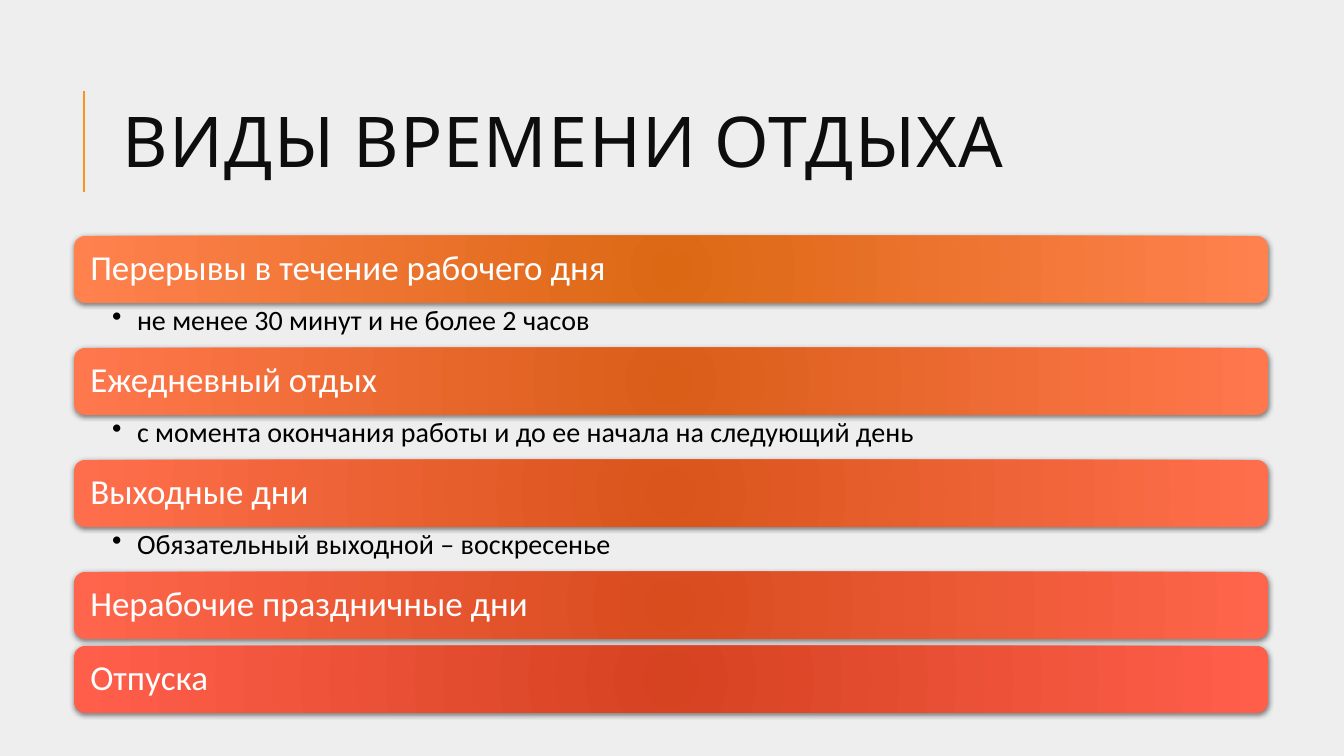
from lxml import etree
from pptx import Presentation
from pptx.dml.color import RGBColor
from pptx.enum.shapes import MSO_CONNECTOR, MSO_SHAPE
from pptx.enum.text import MSO_ANCHOR, PP_ALIGN
from pptx.oxml import parse_xml
from pptx.oxml.ns import qn
from pptx.util import Pt

LINE = MSO_CONNECTOR.STRAIGHT
ROUNDED = MSO_SHAPE.ROUNDED_RECTANGLE
TOP, MIDDLE = MSO_ANCHOR.TOP, MSO_ANCHOR.MIDDLE
LEFT = PP_ALIGN.LEFT

NS = 'xmlns:a="http://schemas.openxmlformats.org/drawingml/2006/main"'
SLIDE_W, SLIDE_H = 1344, 756
EMU_PER_PX = 12192000 / SLIDE_W
COLORS = {"background": "EEEEEE", "accent": "F8931D", "title": "0D0D0D",
          "bar_text": "FFFFFF", "detail": "000000", "shadow": "000000"}

# Bar heading, detail line, centre colour, edge colour
REST_TYPES = [
    ("Перерывы в течение рабочего дня",
     "не менее 30 минут и не более 2 часов", "DC6814", "FF814E"),
    ("Ежедневный отдых",
     "с момента окончания работы и до ее начала на следующий день",
     "DA5E18", "FF774D"),
    ("Выходные дни",
     "Обязательный выходной – воскресенье", "D9551B", "FF6E4C"),
    ("Нерабочие праздничные дни", None, "D84C1E", "FF654C"),
    ("Отпуска", None, "D64321", "FF5E4B"),
]
LIST_X, LIST_Y, LIST_W = 74, 236, 1194
BAR_H, DETAIL_H, BAR_GAP = 67, 45, 7


def px(n):
    return round(n * EMU_PER_PX)


def rgb(name):
    return RGBColor.from_string(COLORS[name])


def write(sp, text, *, size, color, font="Calibri", anchor=MIDDLE,
          insets=(10, 5, 10, 5), line_spacing=0.9, spacing=None, bullet=None):
    tf = sp.text_frame
    tf.word_wrap = True
    tf.vertical_anchor = anchor
    tf.margin_left, tf.margin_top, tf.margin_right, tf.margin_bottom = map(px, insets)
    p = tf.paragraphs[0]
    p.alignment = LEFT
    p.line_spacing = line_spacing
    r = p.add_run()
    r.text = text
    r.font.size = Pt(size)
    r.font.name = font
    r.font.color.rgb = rgb(color)
    if spacing:
        r.font._element.set("spc", str(spacing * 100))
    if bullet:
        pPr = p._p.get_or_add_pPr()
        pPr.set("marL", str(px(25)))
        pPr.set("indent", str(px(-25)))
        etree.SubElement(pPr, qn("a:buChar"), char=bullet)


def add_text(s, x, y, w, h, text, **fmt):
    sp = s.shapes.add_textbox(px(x), px(y), px(w), px(h))
    write(sp, text, **fmt)


def set_radial_fill(sp, center, edge):
    sp.fill.gradient()
    for stop, color in zip(sp.fill.gradient_stops, (center, edge)):
        stop.color.rgb = RGBColor.from_string(color)
    grad = sp._element.spPr.find(qn("a:gradFill"))
    grad.replace(grad.find(qn("a:lin")), parse_xml(
        f'<a:path {NS} path="circle"><a:fillToRect l="100000" t="100000" '
        'r="100000" b="100000"/></a:path>'))


def set_shadow(sp):
    sp.shadow.inherit = False
    sp._element.spPr.find(qn("a:effectLst")).append(parse_xml(
        f'<a:outerShdw {NS} blurRad="{Pt(4)}" dist="{Pt(1)}" dir="5400000" '
        f'rotWithShape="0"><a:srgbClr val="{COLORS["shadow"]}">'
        '<a:alpha val="50000"/></a:srgbClr></a:outerShdw>'))


def add_bar(s, y, text, center, edge):
    sp = s.shapes.add_shape(ROUNDED, px(LIST_X), px(y), px(LIST_W), px(BAR_H))
    set_radial_fill(sp, center, edge)
    sp.line.fill.background()
    set_shadow(sp)
    write(sp, text, size=25, color="bar_text", insets=(13, 10, 13, 10))


def add_line(s, x1, y1, x2, y2, color, width):
    line = s.shapes.add_connector(LINE, px(x1), px(y1), px(x2), px(y2))
    line.line.color.rgb = rgb(color)
    line.line.width = Pt(width)
    etree.SubElement(line._element.spPr, qn("a:effectLst"))


def main():
    prs = Presentation()
    prs.slide_width, prs.slide_height = px(SLIDE_W), px(SLIDE_H)
    s = prs.slides.add_slide(prs.slide_layouts[6])
    s.background.fill.solid()
    s.background.fill.fore_color.rgb = rgb("background")

    # Title with its accent line
    add_line(s, 84, 192, 84, 91, "accent", 1.5)
    add_text(s, 113, 65, 1072, 165, "ВИДЫ ВРЕМЕНИ ОТДЫХА", size=50,
             color="title", font="Cabin", line_spacing=0.8, spacing=1)

    # Stacked bars, each followed by its detail line or a small gap
    y = LIST_Y
    for heading, detail, center, edge in REST_TYPES:
        add_bar(s, y, heading, center, edge)
        y += BAR_H
        if detail:
            add_text(s, LIST_X, y, LIST_W, DETAIL_H, detail, size=20,
                     color="detail", anchor=TOP, insets=(38, 3, 19, 3), bullet="•")
            y += DETAIL_H
        else:
            y += BAR_GAP

    prs.save("out.pptx")


if __name__ == "__main__":
    main()
